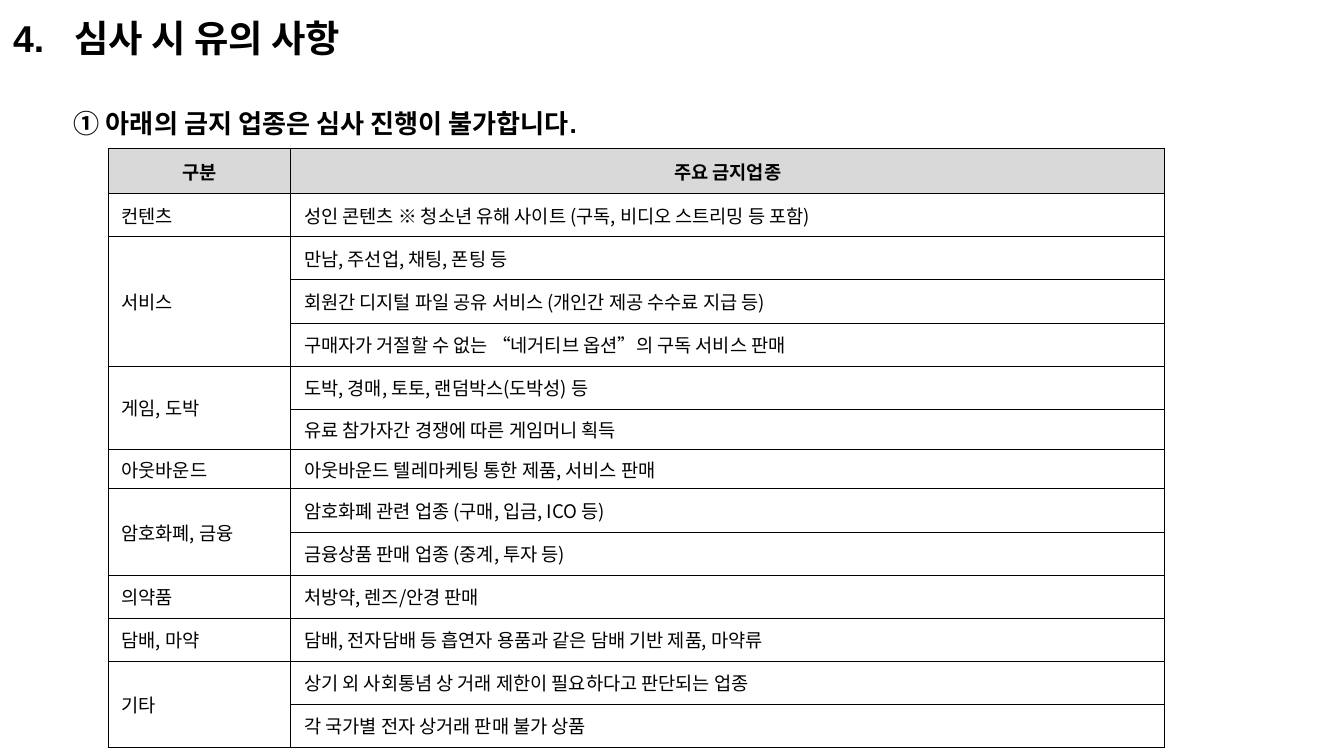
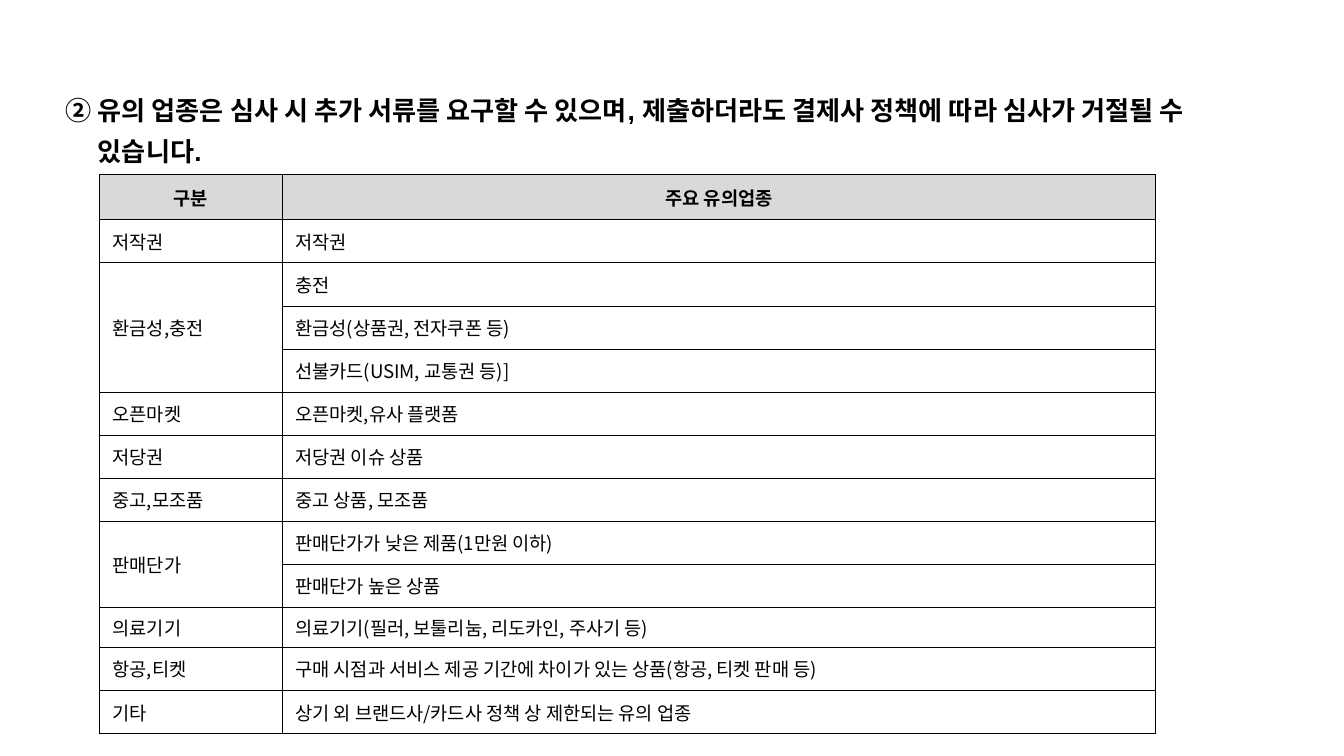
from lxml import etree
from pptx import Presentation
from pptx.dml.color import RGBColor
from pptx.enum import shapes, text
from pptx.oxml import ns
from pptx.util import Pt

BLACK = RGBColor(0, 0, 0)
WHITE = RGBColor(255, 255, 255)
GRAY = RGBColor(0xD9, 0xD9, 0xD9)
LATIN, KOREAN = "Arial", "Noto Sans CJK KR"

TITLE = "4.\t심사 시 유의 사항"

# Each page: heading, its box, table corner, header, groups, short rows
PAGES = [
    dict(
        head="① 아래의 금지 업종은 심사 진행이 불가합니다.",
        box=(32.4, 49, 682, 74), spot=(57.9, 79.5),
        top=("구분", "주요 금지업종"), short=(6, 7),
        groups=[
            ("컨텐츠", ["성인 콘텐츠 ※ 청소년 유해 사이트 (구독, 비디오 스트리밍 등 포함)"]),
            ("서비스", ["만남, 주선업, 채팅, 폰팅 등",
                     "회원간 디지털 파일 공유 서비스 (개인간 제공 수수료 지급 등)",
                     "구매자가 거절할 수 없는 “네거티브 옵션”의 구독 서비스 판매"]),
            ("게임, 도박", ["도박, 경매, 토토, 랜덤박스(도박성) 등",
                        "유료 참가자간 경쟁에 따른 게임머니 획득"]),
            ("아웃바운드", ["아웃바운드 텔레마케팅 통한 제품, 서비스 판매"]),
            ("암호화폐, 금융", ["암호화폐 관련 업종 (구매, 입금, ICO 등)",
                          "금융상품 판매 업종 (중계, 투자 등)"]),
            ("의약품", ["처방약, 렌즈/안경 판매"]),
            ("담배, 마약", ["담배, 전자담배 등 흡연자 용품과 같은 담배 기반 제품, 마약류"]),
            ("기타", ["상기 외 사회통념 상 거래 제한이 필요하다고 판단되는 업종",
                    "각 국가별 전자 상거래 판매 불가 상품"]),
        ]),
    dict(
        head="② 유의 업종은 심사 시 추가 서류를 요구할 수 있으며, "
             "제출하더라도 결제사 정책에 따라 심사가 거절될 수 있습니다.",
        box=(28.1, 41.8, 651, 52), spot=(53.2, 93.5),
        top=("구분", "주요 유의업종"), short=(10,),
        groups=[
            ("저작권", ["저작권"]),
            ("환금성,충전", ["충전", "환금성(상품권, 전자쿠폰 등)",
                        "선불카드(USIM, 교통권 등)]"]),
            ("오픈마켓", ["오픈마켓,유사 플랫폼"]),
            ("저당권", ["저당권 이슈 상품"]),
            ("중고,모조품", ["중고 상품, 모조품"]),
            ("판매단가", ["판매단가가 낮은 제품(1만원 이하)", "판매단가 높은 상품"]),
            ("의료기기", ["의료기기(필러, 보툴리눔, 리도카인, 주사기 등)"]),
            ("항공,티켓", ["구매 시점과 서비스 제공 기간에 차이가 있는 상품(항공, 티켓 판매 등)"]),
            ("기타", ["상기 외 브랜드사/카드사 정책 상 제한되는 유의 업종"]),
        ]),
]
COLS = (97.9, 468)
TOP_H, ROW_H, LOW_H = 24.3, 23.1, 21.4
HANG, TITLE_HANG = 17.3, 32.6


def add_run(para, words, size, font, bold):
    run = para.add_run()
    run.text = words
    face = run.font
    face.size, face.name, face.bold = Pt(size), font, bold
    face.color.rgb = BLACK
    east = etree.SubElement(run._r.get_or_add_rPr(), ns.qn("a:ea"))
    east.set("typeface", KOREAN)


def hang(para, size):
    """Indent all lines but the first."""
    props = para._p.get_or_add_pPr()
    props.set("marL", str(Pt(size)))
    props.set("indent", str(-Pt(size)))


def add_title(slide):
    bar = slide.shapes.add_shape(shapes.MSO_SHAPE.RECTANGLE,
                                 Pt(0), Pt(0.7), Pt(708), Pt(39))
    bar.shadow.inherit = False
    bar.fill.solid()
    bar.fill.fore_color.rgb = WHITE
    bar.line.fill.background()
    frame = bar.text_frame
    frame.margin_left = frame.margin_right = Pt(7.2)
    frame.margin_top = frame.margin_bottom = Pt(7.2)
    frame.vertical_anchor = text.MSO_ANCHOR.MIDDLE
    para = frame.paragraphs[0]
    para.alignment = text.PP_ALIGN.LEFT
    hang(para, TITLE_HANG)
    add_run(para, TITLE, 20, LATIN, True)


def add_head(slide, words, box):
    frame = slide.shapes.add_textbox(*map(Pt, box)).text_frame
    frame.word_wrap = True
    para = frame.paragraphs[0]
    para.line_spacing = Pt(22)
    hang(para, HANG)
    add_run(para, words, 14, LATIN, True)


def add_edges(cell):
    props = cell._tc.get_or_add_tcPr()
    for spot, side in enumerate(("lnL", "lnR", "lnT", "lnB")):
        line = etree.Element(ns.qn("a:" + side), w=str(Pt(0.5)))
        fill = etree.SubElement(line, ns.qn("a:solidFill"))
        etree.SubElement(fill, ns.qn("a:srgbClr"), val=str(BLACK))
        props.insert(spot, line)


def add_grid(slide, page):
    rows = [page["top"]]
    spans = []
    for name, items in page["groups"]:
        spans.append((len(rows), len(items)))
        rows += [(name if n == 0 else "", item) for n, item in enumerate(items)]
    highs = [TOP_H] + [LOW_H if n in page["short"] else ROW_H
                       for n in range(1, len(rows))]
    area = (*page["spot"], sum(COLS), sum(highs))
    grid = slide.shapes.add_table(len(rows), len(COLS), *map(Pt, area)).table
    for col, wide in zip(grid.columns, COLS):
        col.width = Pt(wide)
    for r, (row, high) in enumerate(zip(rows, highs)):
        grid.rows[r].height = Pt(high)
        for c, words in enumerate(row):
            cell = grid.cell(r, c)
            cell.fill.solid()
            cell.fill.fore_color.rgb = WHITE if r else GRAY
            cell.vertical_anchor = text.MSO_ANCHOR.MIDDLE
            add_edges(cell)
            para = cell.text_frame.paragraphs[0]
            if r == 0:
                para.alignment = text.PP_ALIGN.CENTER
            if words:
                add_run(para, words, 10, KOREAN, r == 0)
    for first, count in spans:
        if count > 1:
            grid.cell(first, 0).merge(grid.cell(first + count - 1, 0))


def main():
    deck = Presentation()
    deck.slide_width, deck.slide_height = Pt(720), Pt(405)
    for n, page in enumerate(PAGES):
        slide = deck.slides.add_slide(deck.slide_layouts[6])
        if n == 0:
            add_title(slide)
        add_head(slide, page["head"], page["box"])
        add_grid(slide, page)
    deck.save("out.pptx")


if __name__ == "__main__":
    main()
